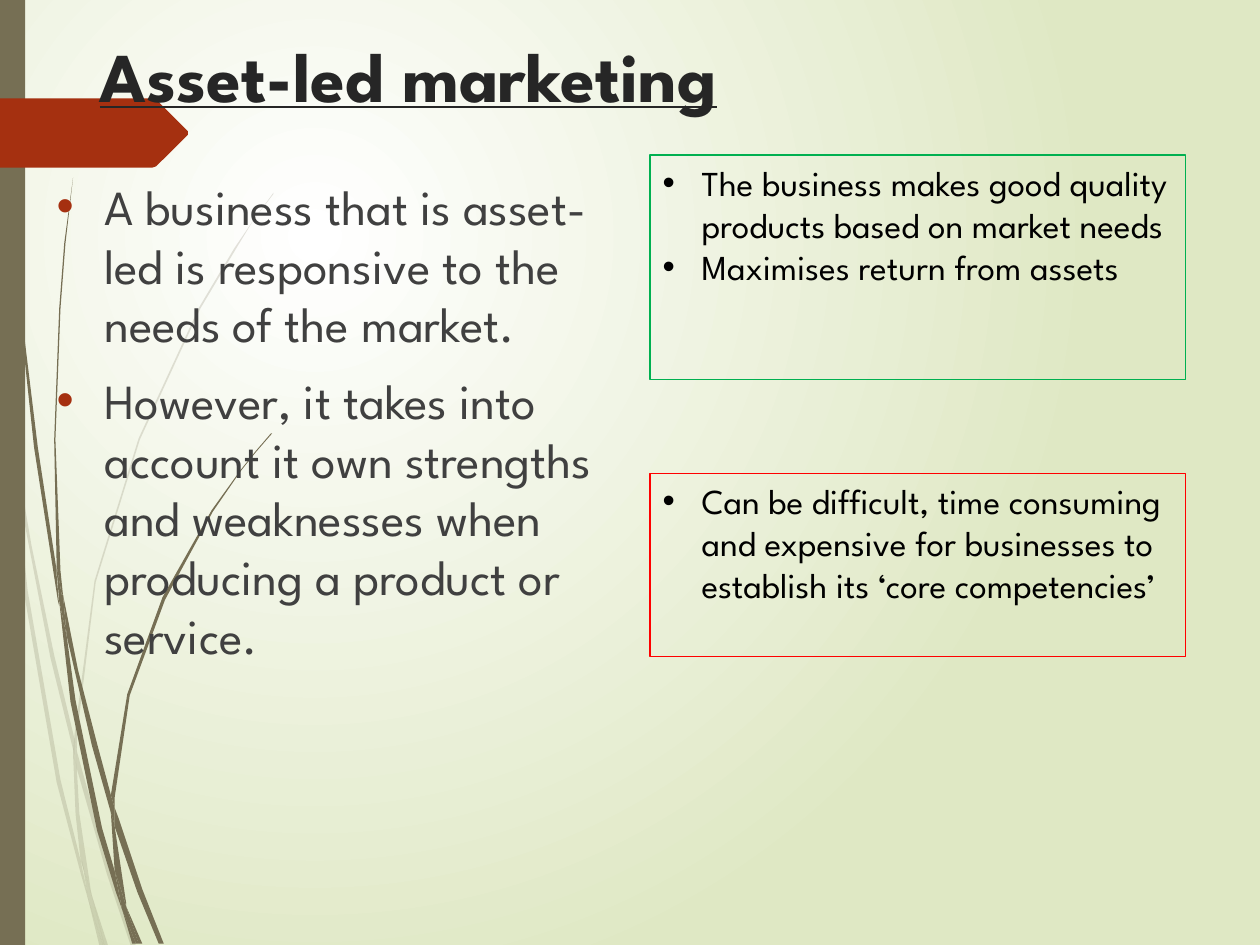
from pptx import Presentation
from pptx.dml.color import RGBColor
from pptx.enum.shapes import MSO_SHAPE as Shape
from pptx.enum.text import MSO_ANCHOR as Anchor, PP_ALIGN as Align
from pptx.oxml.ns import qn
from pptx.util import Inches, Pt
from lxml.etree import SubElement

FONT = "League Spartan"
OLIVE, RUST = "766F54", "A53010"
TITLE = "Asset-led marketing"
BODY = [
    "A business that is asset-led is responsive to the needs of the market.",
    "However, it takes into account it own strengths and weaknesses when "
    "producing a product or service.",
]
BOXES = [
    (1.23, 1.78, "00B050", [
        "The business makes good quality products based on market needs",
        "Maximises return from assets"]),
    (3.76, 1.45, "FF0000", [
        "Can be difficult, time consuming and expensive for businesses to "
        "establish its ‘core competencies’"]),
]
FLAG = [(0, 0.78), (1.21, 0.78), (1.24, 0.79), (1.49, 1.04), (1.49, 1.07),
        (1.24, 1.32), (1.21, 1.33), (0, 1.33)]
# Grass blades: the corners of each outline
PALE = [
    [(0.08, 3.5), (0.06, 3.22), (0, 2.82), (0, 2.99), (0.07, 3.44)],
    [(0.4, 5.22), (0.59, 5.99), (0.59, 5.86), (0.43, 5.2), (0.25, 4.33),
     (0.1, 3.45), (0.12, 3.76)],
    [(0.64, 6.07), (0.61, 5.96), (0.61, 6.1), (0.85, 6.94), (1.04, 7.51),
     (1.08, 7.51), (0.88, 6.92)],
    [(0.83, 7.51), (0.86, 7.51), (0.73, 7.11)],
    [(0.64, 6.83), (0.48, 6.19), (0.22, 4.69), (0.12, 3.76), (0.08, 3.5),
     (0.19, 4.7), (0.45, 6.21), (0.64, 6.93), (0.7, 7.14), (0.69, 7.07)],
    [(0.58, 5.99), (0.6, 6.46), (0.64, 6.83), (0.67, 6.92), (0.73, 7.11),
     (0.72, 7.06), (0.63, 6.46), (0.61, 6.1), (0.61, 6.08)],
    [(0.61, 5.84), (0.76, 4.62), (1.11, 3.49), (1.59, 2.45), (1.87, 1.98),
     (2.01, 1.75), (2.17, 1.54), (2.17, 1.53), (2.01, 1.75), (1.86, 1.97),
     (1.58, 2.44), (1.1, 3.48), (0.75, 4.61), (0.59, 5.84), (0.59, 5.86),
     (0.61, 5.96)],
    [(0.7, 7.14), (0.79, 7.51), (0.82, 7.51)],
    [(0.61, 6.08), (0.61, 6.1), (0.61, 5.96), (0.59, 5.86), (0.58, 5.99)],
    [(0.67, 6.92), (0.65, 6.83), (0.69, 7.07), (0.7, 7.14), (0.82, 7.51),
     (0.83, 7.51), (0.73, 7.11)],
]
DARK = [
    [(0.05, 1.1), (0.14, 2.33), (0.27, 3.55), (0.46, 4.77), (0.47, 4.81),
     (0.45, 4.57), (0.45, 4.53), (0.3, 3.55), (0.15, 2.32), (0.06, 1.09),
     (0.04, 0.48), (0.03, 0), (0.02, 0), (0.03, 0.48)],
    [(0.73, 5.92), (0.88, 6.45), (0.88, 6.31), (0.77, 5.9), (0.62, 5.32),
     (0.5, 4.72), (0.53, 5.05)],
    [(0.94, 6.49), (0.91, 6.41), (0.91, 6.56), (1.09, 7.08), (1.26, 7.49),
     (1.3, 7.49), (1.13, 7.06)],
    [(0.91, 6.91), (0.81, 6.57), (0.6, 5.56), (0.53, 5.05), (0.47, 4.77),
     (0.56, 5.57), (0.77, 6.59), (0.92, 7.08), (0.97, 7.22), (0.96, 7.17)],
    [(0.5, 4.72), (0.48, 4.53), (0.44, 3.49), (0.48, 2.45), (0.52, 1.93),
     (0.58, 1.41), (0.51, 1.93), (0.47, 2.45), (0.43, 3.49), (0.45, 4.49),
     (0.49, 4.72)],
    [(1.1, 7.49), (1.13, 7.49), (1, 7.19)],
    [(0.47, 4.77), (0.53, 5.05), (0.5, 4.72), (0.49, 4.72), (0.45, 4.49),
     (0.45, 4.53)],
    [(0.91, 6.33), (1.03, 5.52), (1.31, 4.76), (1.69, 4.06), (1.91, 3.74),
     (2.03, 3.59), (2.16, 3.44), (2.15, 3.44), (2.03, 3.58), (1.91, 3.73),
     (1.68, 4.05), (1.29, 4.74), (1.01, 5.51), (0.88, 6.31), (0.91, 6.41)],
    [(0.97, 7.22), (1.05, 7.49), (1.08, 7.49)],
    [(0.88, 6.45), (0.91, 6.91), (0.96, 7.06), (1, 7.19), (1, 7.16),
     (0.91, 6.56), (0.9, 6.51)],
    [(0.88, 6.45), (0.9, 6.51), (0.91, 6.56), (0.91, 6.41), (0.88, 6.31)],
    [(0.96, 7.06), (0.91, 6.91), (0.96, 7.17), (0.97, 7.22), (1.08, 7.49),
     (1.1, 7.49), (1, 7.19)],
]


def rgb(code):
    return RGBColor.from_string(code)


def paint(shape, color, alpha=None):
    shape.shadow.inherit = False
    shape.line.fill.background()
    shape.fill.solid()
    shape.fill.fore_color.rgb = rgb(color)
    if alpha:
        tone = shape.fill._xPr.find(qn("a:solidFill"))[0]
        SubElement(tone, qn("a:alpha"), val=str(alpha * 1000))


def outline(shapes, pts, color, alpha=None):
    pts = [(Inches(x), Inches(y)) for x, y in pts]
    pen = shapes.build_freeform(*pts[0])
    pen.add_line_segments(pts[1:])
    paint(pen.convert_to_shape(), color, alpha)


def write(shape, lines, size, color, bold=None, under=None, indent=0,
          bullet=None, gap=0):
    frame = shape.text_frame
    frame.word_wrap = True
    frame.vertical_anchor = Anchor.TOP
    for i, line in enumerate(lines):
        para = frame.paragraphs[0] if i == 0 else frame.add_paragraph()
        para.alignment = Align.LEFT
        para.space_before = Pt(gap if i else 0)
        if indent:
            props = para._p.get_or_add_pPr()
            props.set("marL", str(Inches(indent)))
            props.set("indent", str(-Inches(indent)))
            if bullet:
                tone = SubElement(props, qn("a:buClr"))
                SubElement(tone, qn("a:srgbClr"), val=bullet)
            SubElement(props, qn("a:buFont"), typeface="Arial")
            SubElement(props, qn("a:buChar"), char="•")
        run = para.add_run()
        run.text = line
        font = run.font
        font.name, font.size = FONT, Pt(size)
        font.bold, font.underline = bold, under
        font.color.rgb = rgb(color)


def backdrop(slide):
    """Fill the slide with a glow centred in its upper left."""
    fill = slide.background.fill
    fill.gradient()
    for stop, color in zip(fill.gradient_stops, ("FFFFFF", "DFE8C4")):
        stop.color.rgb = rgb(color)
    grad = slide.background._cSld.find(".//" + qn("a:gradFill"))
    grad.remove(grad.find(qn("a:lin")))
    glow = SubElement(grad, qn("a:path"), path="circle")
    SubElement(glow, qn("a:fillToRect"), l="50000", t="50000",
               r="100000", b="100000")


def main():
    deck = Presentation()
    deck.slide_width, deck.slide_height = Inches(10), Inches(7.5)
    slide = deck.slides.add_slide(deck.slide_layouts[5])
    shapes = slide.shapes
    backdrop(slide)

    for blades, alpha in ((PALE, 20), (DARK, None)):
        tuft = shapes.add_group_shape()
        for blade in blades:
            outline(tuft.shapes, blade, OLIVE, alpha)
    strip = shapes.add_shape(Shape.RECTANGLE, 0, 0, Inches(0.2), Inches(7.5))
    paint(strip, OLIVE)
    outline(shapes, FLAG, RUST)

    title = shapes.title
    title.left, title.top = Inches(0.69), Inches(0.21)
    title.width, title.height = Inches(9.64), Inches(1.64)
    write(title, [TITLE], 40, "262626", bold=True, under=True)
    shapes._spTree.append(title._element)  # in front of the flag

    body = shapes.add_textbox(Inches(0.35), Inches(1.35),
                              Inches(4.65), Inches(5.28))
    write(body, BODY, 28, "404040", indent=0.38, bullet=RUST, gap=10)

    for top, height, color, lines in BOXES:
        box = shapes.add_shape(Shape.RECTANGLE, Inches(5.16), Inches(top),
                               Inches(4.25), Inches(height))
        box.shadow.inherit = False
        box.fill.background()
        box.line.color.rgb = rgb(color)
        box.line.width = Pt(0.75)
        write(box, lines, 20, "000000", indent=0.31)

    deck.save("out.pptx")


if __name__ == "__main__":
    main()
